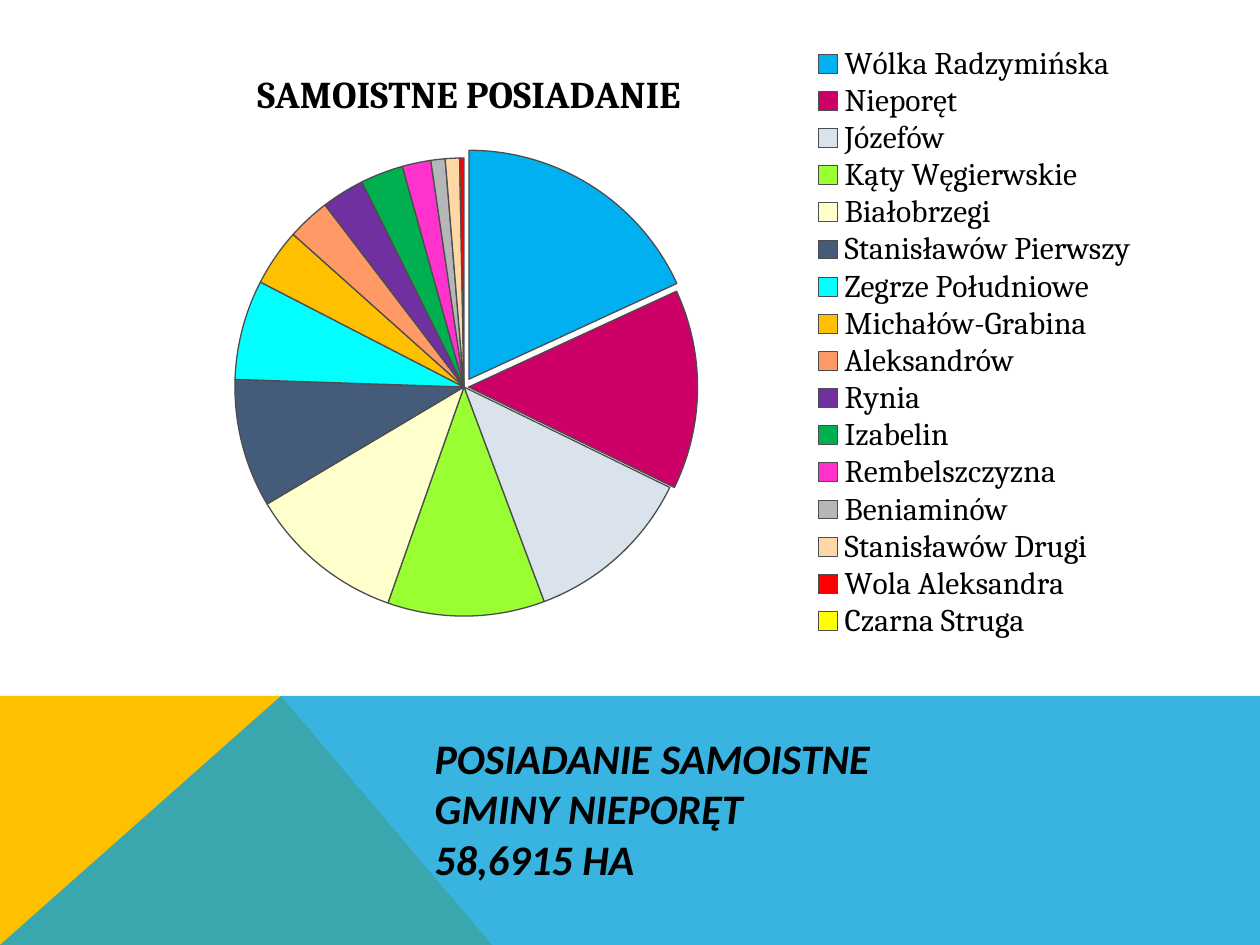
from lxml import etree
from pptx import Presentation
from pptx import util as u
from pptx.chart.data import CategoryChartData
from pptx.dml.color import RGBColor
from pptx.enum import chart as ch, text
from pptx.oxml import parse_xml
from pptx.oxml.ns import nsdecls, qn

SCALE = 914400 // 126
COLORS = {"text": "000000", "outline": "4D4D4D", "gold": "FFC000", "blue": "08A1D9"}
TITLE = "POSIADANIE SAMOISTNE \vGMINY NIEPORĘT\v58,6915 HA"
CHART_TITLE = "SAMOISTNE POSIADANIE"
# village, share in percent, slice colour
SLICES = [
    ("Wólka Radzymińska", 18, "00B0F0"),
    ("Nieporęt", 14, "CC0066"),
    ("Józefów", 12, "DAE2EB"),
    ("Kąty Węgierwskie", 11, "99FF33"),
    ("Białobrzegi", 11, "FFFFCC"),
    ("Stanisławów Pierwszy", 9, "445B7A"),
    ("Zegrze Południowe", 7, "00FFFF"),
    ("Michałów-Grabina", 4, "FFC000"),
    ("Aleksandrów", 3, "FF9966"),
    ("Rynia", 3, "7030A0"),
    ("Izabelin", 3, "00B050"),
    ("Rembelszczyzna", 2, "FF33CC"),
    ("Beniaminów ", 1, "B4B6B8"),
    ("Stanisławów Drugi", 1, "FFD8A5"),
    ("Wola Aleksandra", 0.3, "FF0000"),
    ("Czarna Struga", 0, "FFFF00"),
]
EXPLOSIONS = {0: 4, 1: 2}


def px(n):
    return u.Emu(n * SCALE)


def rgb(value):
    return RGBColor.from_string(value)


def set_font(font, **fmt):
    font.color.rgb = rgb(COLORS["text"])
    for key, value in fmt.items():
        setattr(font, key, value)


def add_band(s, points, color, alpha=100):
    """Draw a filled polygon behind everything that follows."""
    fb = s.shapes.build_freeform(*points[0], scale=SCALE)
    fb.add_line_segments(points[1:], close=True)
    sp = fb.convert_to_shape()
    sp.shadow.inherit = False
    sp.line.fill.background()
    sp.fill.solid()
    sp.fill.fore_color.rgb = rgb(color)
    if alpha < 100:
        clr = sp.fill._xPr.find(qn("a:solidFill"))[0]
        etree.SubElement(clr, qn("a:alpha"), val=str(alpha * 1000))


def format_title(s):
    sp = s.shapes.title
    box = {"left": 422, "top": 770, "width": 694, "height": 76}
    for key, value in box.items():
        setattr(sp, key, px(value))
    tf = sp.text_frame
    tf.text = TITLE
    tf.word_wrap = True
    tf.auto_size = text.MSO_AUTO_SIZE.NONE
    tf.vertical_anchor = text.MSO_ANCHOR.MIDDLE
    p = tf.paragraphs[0]
    p.alignment = text.PP_ALIGN.LEFT
    for r in p.runs:
        set_font(r.font, name="Calibri", size=u.Pt(24), bold=True, italic=True)
    s.shapes._spTree.append(sp._element)


def layout_xml(x, y, w=None, h=None, inner=False):
    """Manual chart layout in fractions of the chart area."""
    target = '<c:layoutTarget val="inner"/>' if inner else ""
    size = f'<c:w val="{w}"/><c:h val="{h}"/>' if w else ""
    return parse_xml(
        f'<c:layout {nsdecls("c")}><c:manualLayout>{target}<c:xMode val="edge"/>'
        f'<c:yMode val="edge"/><c:x val="{x}"/><c:y val="{y}"/>{size}'
        "</c:manualLayout></c:layout>")


def place(parent, before, layout):
    """Replace the layout of a chart part, keeping the schema order."""
    for old in parent.findall(qn("c:layout")):
        parent.remove(old)
    parent.find(qn(before)).addprevious(layout)


def format_slices(plot):
    plot.vary_by_categories = True
    for i, (_, _, color) in enumerate(SLICES):
        point = plot.series[0].points[i]
        point.format.fill.solid()
        point.format.fill.fore_color.rgb = rgb(color)
        point.format.line.color.rgb = rgb(COLORS["outline"])
        point.format.line.width = u.Pt(0.75)
    for dpt in plot.series[0]._element.findall(qn("c:dPt")):
        index = int(dpt.find(qn("c:idx")).get("val"))
        if index in EXPLOSIONS:
            explosion = etree.Element(qn("c:explosion"), val=str(EXPLOSIONS[index]))
            dpt.find(qn("c:spPr")).addprevious(explosion)


def format_legend(chart):
    chart.has_legend = True
    legend = chart.legend
    legend.position = ch.XL_LEGEND_POSITION.RIGHT
    legend.include_in_layout = False
    set_font(legend.font, name="Cambria", size=u.Pt(18))
    place(legend._element, "c:overlay", layout_xml(0.66, 0, 0.33, 1))


def add_pie(s):
    data = CategoryChartData()
    data.categories = [name for name, _, _ in SLICES]
    data.add_series(CHART_TITLE, [share for _, share, _ in SLICES])
    chart = s.shapes.add_chart(ch.XL_CHART_TYPE.PIE, px(115), px(45),
                               px(1042), px(595), data).chart
    set_font(chart.font, name="Cambria", size=u.Pt(18))
    chart.has_title = True
    tf = chart.chart_title.text_frame
    tf.text = CHART_TITLE
    set_font(tf.paragraphs[0].runs[0].font, name="Cambria", size=u.Pt(21.6), bold=True)
    chart.chart_title.include_in_layout = False
    place(chart.chart_title._element, "c:overlay", layout_xml(0.13, 0.03))
    format_slices(chart.plots[0])
    place(chart._chartSpace.chart.plotArea, "c:pieChart",
          layout_xml(0.11, 0.19, 0.45, 0.77, inner=True))
    format_legend(chart)


def main():
    prs = Presentation()
    prs.slide_width, prs.slide_height = px(1260), px(945)
    s = prs.slides.add_slide(prs.slide_layouts[5])
    add_band(s, [(0, 945), (0, 696), (281, 696), (492, 945)], COLORS["gold"])
    add_band(s, [(0, 945), (281, 696), (1260, 696), (1260, 945)], COLORS["blue"], 80)
    format_title(s)
    add_pie(s)
    prs.save("out.pptx")


if __name__ == "__main__":
    main()
